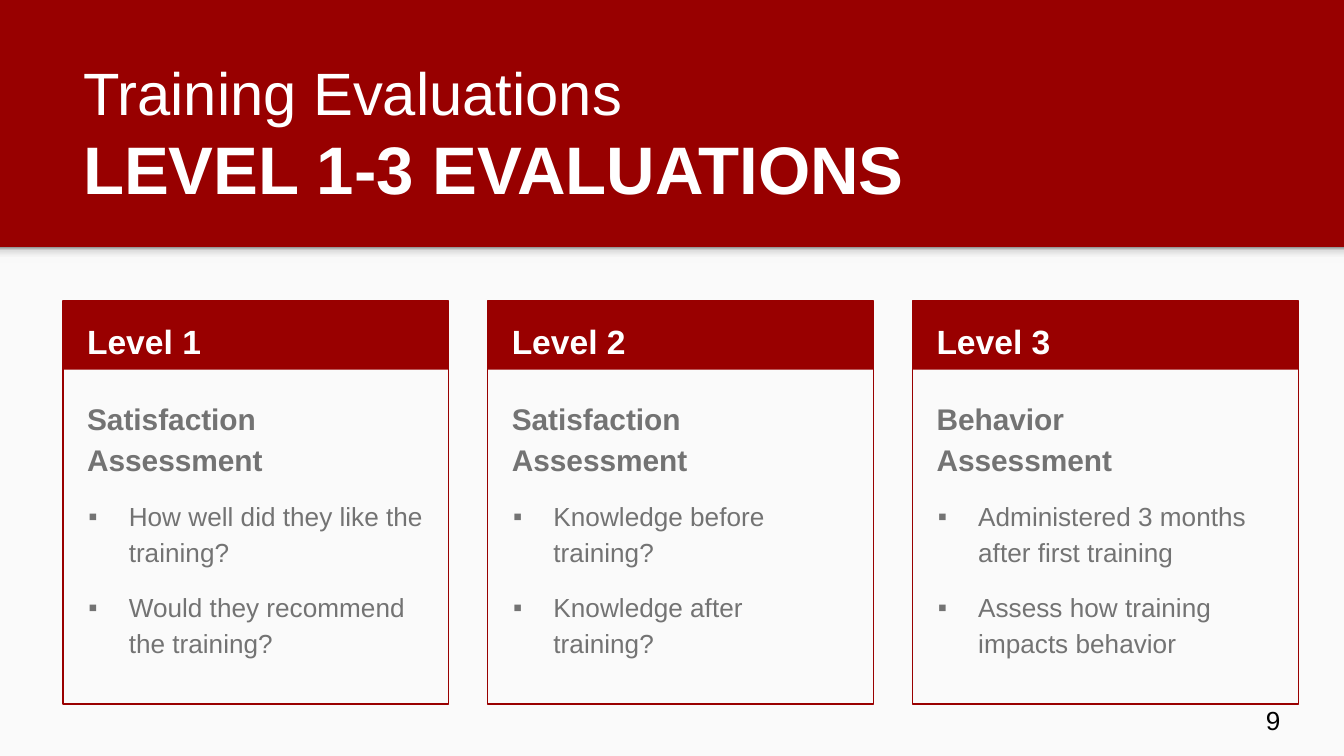
from lxml.etree import SubElement
from pptx import Presentation
from pptx.dml.color import RGBColor
from pptx.enum.shapes import MSO_SHAPE
from pptx.enum.text import MSO_ANCHOR
from pptx.oxml import parse_xml
from pptx.oxml.ns import nsdecls, qn
from pptx.util import Inches, Pt

SLIDE_WIDTH = 10
SLIDE_HEIGHT = SLIDE_WIDTH * 9 / 16
BANNER_HEIGHT = 1.84
COLORS = {
    "banner": "980000",
    "card": "990000",
    "page": "FAFAFA",
    "white": "FFFFFF",
    "body": "737373",
    "black": "000000",
}
SHADOW_STOPS = [(0, "F9F9F9"), (36, "F9F9F9"), (80, "DEDEDE"), (100, "999999")]
CARDS = [
    ("Level 1", "Satisfaction Assessment",
     ["How well did they like the training?", "Would they recommend the training?"]),
    ("Level 2", "Satisfaction Assessment",
     ["Knowledge before training?", "Knowledge after \ntraining?"]),
    ("Level 3", "Behavior \nAssessment",
     ["Administered 3 months after first training", "Assess how training impacts behavior"]),
]


def color(name):
    return RGBColor.from_string(COLORS[name])


def add_rectangle(slide, left, top, width, height, fill=None, line=None):
    shape = slide.shapes.add_shape(
        MSO_SHAPE.RECTANGLE, Inches(left), Inches(top), Inches(width), Inches(height))
    shape.shadow.inherit = False
    if fill:
        shape.fill.solid()
        shape.fill.fore_color.rgb = color(fill)
    else:
        shape.fill.background()
    if line:
        shape.line.color.rgb = color(line)
        shape.line.width = Pt(0.75)
    else:
        shape.line.fill.background()
    return shape


def add_text_frame(slide, left, top, width, height, anchor=MSO_ANCHOR.TOP):
    box = slide.shapes.add_textbox(Inches(left), Inches(top), Inches(width), Inches(height))
    frame = box.text_frame
    frame.word_wrap = True
    frame.vertical_anchor = anchor
    frame.margin_left = frame.margin_right = Inches(0.1)
    frame.margin_top = frame.margin_bottom = Inches(0.1)
    return frame


def add_run(paragraph, text, size, color_name, bold=False):
    for index, part in enumerate(text.split("\n")):
        if index:
            paragraph.add_line_break()
        run = paragraph.add_run()
        run.text = part
        run.font.name = "Arial"
        run.font.size = Pt(size)
        run.font.bold = bold
        run.font.color.rgb = color(color_name)


def add_bullet(paragraph):
    properties = paragraph._p.get_or_add_pPr()
    properties.set("marL", str(Inches(0.31)))
    properties.set("indent", str(Inches(-0.3)))
    bullet_color = SubElement(properties, qn("a:buClr"))
    SubElement(bullet_color, qn("a:srgbClr")).set("val", COLORS["body"])
    SubElement(properties, qn("a:buFont")).set("typeface", "Arial")
    SubElement(properties, qn("a:buChar")).set("char", "▪")


def add_page_area(slide, left, top, width, height):
    add_rectangle(slide, left, top, width, height, fill="page")
    shadow = add_rectangle(slide, left, top, width, 0.12)
    stops = "".join(
        f'<a:gs pos="{position * 1000}"><a:srgbClr val="{value}"/></a:gs>'
        for position, value in SHADOW_STOPS)
    gradient = parse_xml(
        f'<a:gradFill {nsdecls("a")}><a:gsLst>{stops}</a:gsLst>'
        '<a:lin ang="16200000" scaled="0"/></a:gradFill>')
    properties = shadow._element.spPr
    properties.replace(properties.find(qn("a:noFill")), gradient)


def add_title(slide, left, top, width, height):
    frame = add_text_frame(slide, left, top, width, height, MSO_ANCHOR.BOTTOM)
    paragraph = frame.paragraphs[0]
    add_run(paragraph, "Training Evaluations", 32, "white")
    paragraph.add_line_break()
    add_run(paragraph, "LEVEL 1-3 EVALUATIONS", 36, "white", bold=True)


def add_card(slide, left, top, width, height, level, heading, bullets):
    add_rectangle(slide, left, top, width, 0.51, fill="card")
    add_rectangle(slide, left, top, width, height, line="card")

    label = add_text_frame(slide, left + 0.08, top, width - 0.14, 0.5).paragraphs[0]
    label.line_spacing = 1.15
    add_run(label, level, 18, "white", bold=True)

    frame = add_text_frame(slide, left + 0.08, top + 0.6, width - 0.16, 1.78)
    paragraph = frame.paragraphs[0]
    paragraph.line_spacing = 1.15
    add_run(paragraph, heading, 16, "body", bold=True)
    for bullet in bullets:
        paragraph = frame.add_paragraph()
        paragraph.line_spacing = 1.15
        paragraph.space_before = Pt(10)
        add_bullet(paragraph)
        add_run(paragraph, bullet, 14, "body")
    paragraph.space_after = Pt(10)


def add_cards(slide, left, top, card_width, height, pitch):
    for index, card in enumerate(CARDS):
        add_card(slide, left + index * pitch, top, card_width, height, *card)


def add_slide_number(slide, left, top, width, height):
    frame = add_text_frame(slide, left, top, width, height, MSO_ANCHOR.MIDDLE)
    add_run(frame.paragraphs[0], "9", 14, "black")


def main():
    presentation = Presentation()
    presentation.slide_width = Inches(SLIDE_WIDTH)
    presentation.slide_height = Inches(SLIDE_HEIGHT)
    slide = presentation.slides.add_slide(presentation.slide_layouts[6])
    slide.background.fill.solid()
    slide.background.fill.fore_color.rgb = color("banner")

    add_page_area(slide, 0, BANNER_HEIGHT, SLIDE_WIDTH, SLIDE_HEIGHT - BANNER_HEIGHT)
    add_title(slide, 0.52, 0.81, 8.99, 0.84)
    add_cards(slide, 0.47, 2.24, 2.87, 3, 3.16)
    add_slide_number(slide, 9.32, 5.14, 0.6, 0.43)
    presentation.save("out.pptx")


if __name__ == "__main__":
    main()
